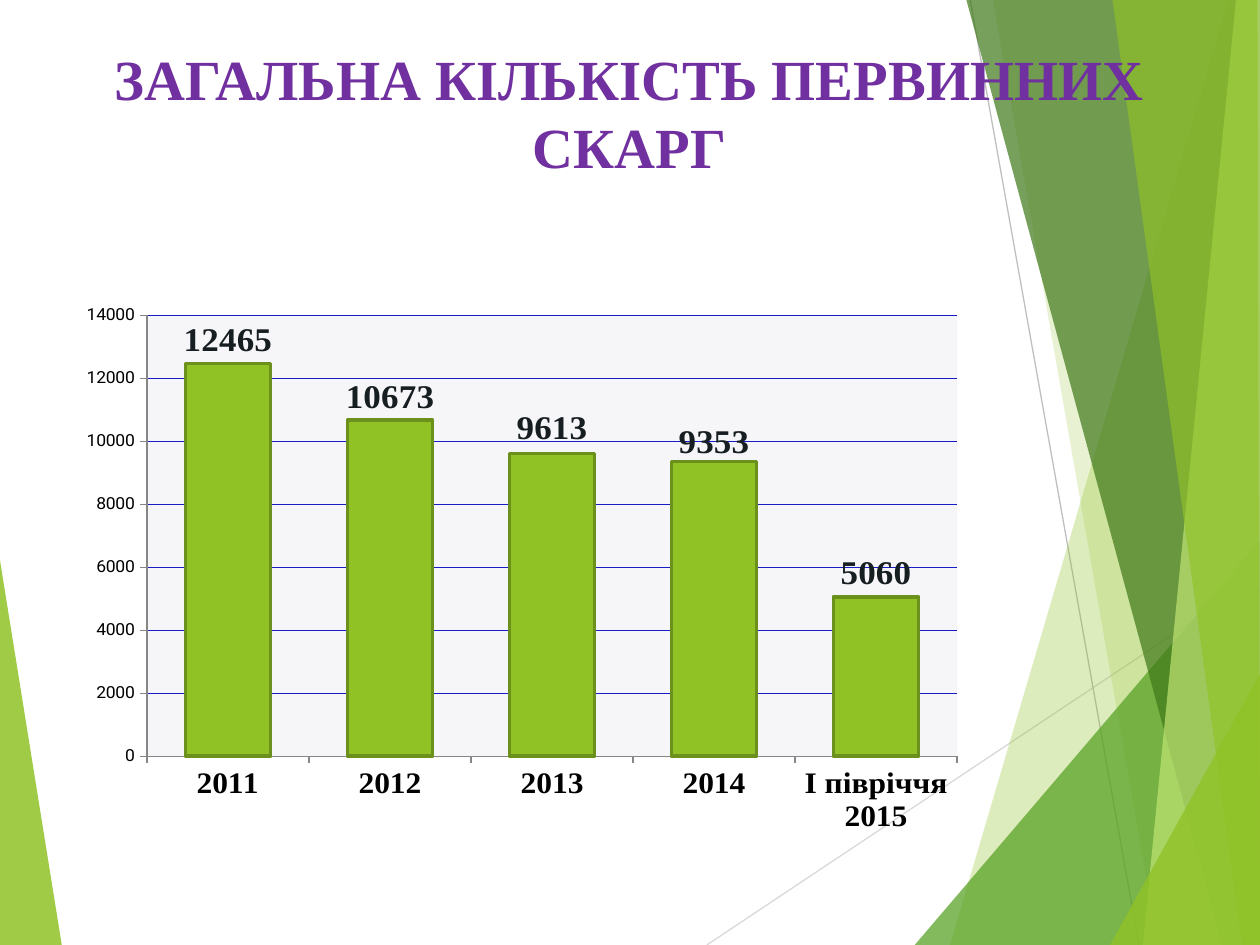
import pptx
import pptx.chart.data
import pptx.dml.color
import pptx.enum.chart
import pptx.enum.text
import pptx.oxml
import pptx.oxml.ns
import pptx.util
from lxml import etree

RGBColor = pptx.dml.color.RGBColor
LIME = RGBColor(0x90, 0xC2, 0x26)
PALE_LIME = RGBColor(0xC0, 0xE4, 0x74)
GREEN = RGBColor(0x54, 0xA0, 0x21)
DARK_GREEN = RGBColor(0x3F, 0x78, 0x19)
OLIVE = RGBColor(0x6B, 0x90, 0x1C)
PURPLE = RGBColor(0x70, 0x30, 0xA0)
BLUE = RGBColor(0x18, 0x1C, 0xC7)
INK = RGBColor(0x16, 0x1E, 0x22)
BLACK = RGBColor(0, 0, 0)
AXIS_GREY = RGBColor(0x86, 0x86, 0x86)
LIGHT_GREY = RGBColor(0xD9, 0xD9, 0xD9)
MID_GREY = RGBColor(0xBF, 0xBF, 0xBF)
PLOT_GREY = RGBColor(0xF6, 0xF6, 0xF8)
SERIF = "Times New Roman"
OUTSIDE_END = pptx.enum.chart.XL_LABEL_POSITION.OUTSIDE_END
NAMES = pptx.oxml.ns.nsdecls("c", "a")

WIDTH, HEIGHT = pptx.util.Inches(10), pptx.util.Inches(7.5)
SLIDE_BOX = (0, 0, WIDTH, HEIGHT)
TITLE_BOX = (0.05 * WIDTH, 0.04 * HEIGHT, 0.899 * WIDTH, 0.167 * HEIGHT)
CHART_BOX = (0.066 * WIDTH, 0.315 * HEIGHT, 0.695 * WIDTH, 0.566 * HEIGHT)

LINES = [
    ((0.561, 1), (1, 0.61), LIGHT_GREY),
    ((0.77, 0), (0.904, 1), MID_GREY),
]
FACETS = [
    ([(0, 0.593), (0.049, 1), (0, 1)], LIME, 85),
    ([(0.975, 0), (0.754, 1), (1, 1), (1, 0)], LIME, 30),
    ([(0.788, 0), (0.919, 1), (1, 1), (1, 0)], LIME, 20),
    ([(0.726, 1), (1, 0.572), (1, 1)], GREEN, 72),
    ([(0.767, 0), (0.97, 1), (1, 1), (1, 0)], DARK_GREEN, 70),
    ([(0.981, 0), (0.907, 1), (1, 1), (1, 0)], PALE_LIME, 70),
    ([(0.883, 0), (0.986, 1), (1, 1), (0.998, 0)], LIME, 65),
    ([(0.881, 1), (1, 0.713), (1, 1)], LIME, 80),
]
COMPLAINTS = {
    "2011": 12465,
    "2012": 10673,
    "2013": 9613,
    "2014": 9353,
    "І півріччя 2015": 5060,
}
LABEL_SHIFTS = {2: -0.004, 3: 0.008}


def set_font(font, size, color, name=SERIF, bold=True):
    """Apply one text style."""
    font.size, font.name, font.bold = pptx.util.Pt(size), name, bold
    font.color.rgb = color


def add_facet(page, points, color, opacity):
    """Draw one translucent polygon."""
    builder = page.shapes.build_freeform(*points[0])
    builder.add_line_segments(points[1:], close=True)
    facet = builder.convert_to_shape()
    facet.shadow.inherit = False
    facet.fill.solid()
    facet.fill.fore_color.rgb = color
    facet.line.fill.background()
    solid = facet.element.spPr.find(pptx.oxml.ns.qn("a:solidFill"))
    etree.SubElement(solid[0], pptx.oxml.ns.qn("a:alpha"), val=str(opacity * 1000))


def add_line(page, start, end, color):
    """Draw one thin line without a shadow."""
    line = page.shapes.add_connector(1, *start, *end)
    line.line.color.rgb = color
    line.line.width = pptx.util.Pt(0.75)
    etree.SubElement(line.element.spPr, pptx.oxml.ns.qn("a:effectLst"))


def add_decoration(page, box):
    """Place the lines and overlapping facets within the box."""
    left, top, width, height = box

    def locate(point):
        return round(left + point[0] * width), round(top + point[1] * height)

    for start, end, color in LINES:
        add_line(page, locate(start), locate(end), color)
    for points, color, opacity in FACETS:
        add_facet(page, [locate(point) for point in points], color, opacity)


def add_title(page, box):
    """Format the title placeholder and bring it above the facets."""
    title = page.shapes.title
    title.left, title.top, title.width, title.height = map(round, box)
    frame = title.text_frame
    frame.text = "ЗАГАЛЬНА КІЛЬКІСТЬ ПЕРВИННИХ СКАРГ"
    frame.word_wrap = True
    frame.auto_size = pptx.enum.text.MSO_AUTO_SIZE.NONE
    frame.vertical_anchor = pptx.enum.text.MSO_ANCHOR.MIDDLE
    frame.margin_bottom = pptx.util.Inches(0.13)
    paragraph = frame.paragraphs[0]
    paragraph.alignment = pptx.enum.text.PP_ALIGN.CENTER
    set_font(paragraph.font, 32.4, PURPLE)
    title.element.getparent().append(title.element)


def format_plot_area(chart):
    """Fix the inner plot position and its background."""
    area = chart.element.chart.plotArea
    for layout in area.findall(pptx.oxml.ns.qn("c:layout")):
        area.remove(layout)
    shares = {"x": 0.073, "y": 0.035, "w": 0.925, "h": 0.872}
    sizes = "".join(f'<c:{key} val="{share}"/>' for key, share in shares.items())
    area.insert(0, pptx.oxml.parse_xml(
        f'<c:layout {NAMES}><c:manualLayout><c:layoutTarget val="inner"/>'
        f'<c:xMode val="edge"/><c:yMode val="edge"/>{sizes}'
        '</c:manualLayout></c:layout>'))
    area.append(pptx.oxml.parse_xml(
        f'<c:spPr {NAMES}><a:solidFill><a:srgbClr val="{PLOT_GREY}"/>'
        '</a:solidFill></c:spPr>'))


def format_axes(chart):
    """Style both axes and the gridlines."""
    values, categories = chart.value_axis, chart.category_axis
    values.minimum_scale, values.maximum_scale, values.major_unit = 0, 14000, 2000
    grid = values.major_gridlines.format.line
    grid.color.rgb, grid.width = BLUE, pptx.util.Pt(0.75)
    for axis in (values, categories):
        axis.major_tick_mark = pptx.enum.chart.XL_TICK_MARK.OUTSIDE
        axis.format.line.color.rgb = AXIS_GREY
    set_font(values.tick_labels.font, 10, BLACK, "Roboto", False)
    set_font(categories.tick_labels.font, 18, BLACK)


def format_labels(series):
    """Show values above the columns and shift two of them."""
    labels = series.data_labels
    labels.show_value = True
    labels.position = OUTSIDE_END
    set_font(labels.font, 20, INK)
    for index, shift in LABEL_SHIFTS.items():
        label = series.points[index].data_label
        set_font(label.font, 20, INK)
        label.position = OUTSIDE_END
    for item in labels._element.findall(pptx.oxml.ns.qn("c:dLbl")):
        shift = LABEL_SHIFTS[item.idx.val]
        item.idx.addnext(pptx.oxml.parse_xml(
            f'<c:layout {NAMES}><c:manualLayout><c:x val="0"/>'
            f'<c:y val="{shift}"/></c:manualLayout></c:layout>'))


def add_complaints_chart(page, box):
    """Add the column chart of complaints by period."""
    data = pptx.chart.data.CategoryChartData()
    data.categories = list(COMPLAINTS)
    data.add_series("Series 1", list(COMPLAINTS.values()))
    kind = pptx.enum.chart.XL_CHART_TYPE.COLUMN_CLUSTERED
    chart = page.shapes.add_chart(kind, *map(round, box), data).chart
    chart.has_legend = chart.has_title = False
    set_font(chart.font, 10, BLACK, "Roboto", False)
    plot = chart.plots[0]
    plot.gap_width, plot.vary_by_categories = 90, False
    series = plot.series[0]
    series.format.fill.solid()
    series.format.fill.fore_color.rgb = LIME
    series.format.line.color.rgb = OLIVE
    series.format.line.width = pptx.util.Pt(2)
    format_labels(series)
    format_axes(chart)
    format_plot_area(chart)


def main():
    """Build and save the deck."""
    deck = pptx.Presentation()
    deck.slide_width, deck.slide_height = WIDTH, HEIGHT
    page = deck.slides.add_slide(deck.slide_layouts.get_by_name("Title Only"))
    add_decoration(page, SLIDE_BOX)
    add_title(page, TITLE_BOX)
    add_complaints_chart(page, CHART_BOX)
    deck.save("out.pptx")


if __name__ == "__main__":
    main()
